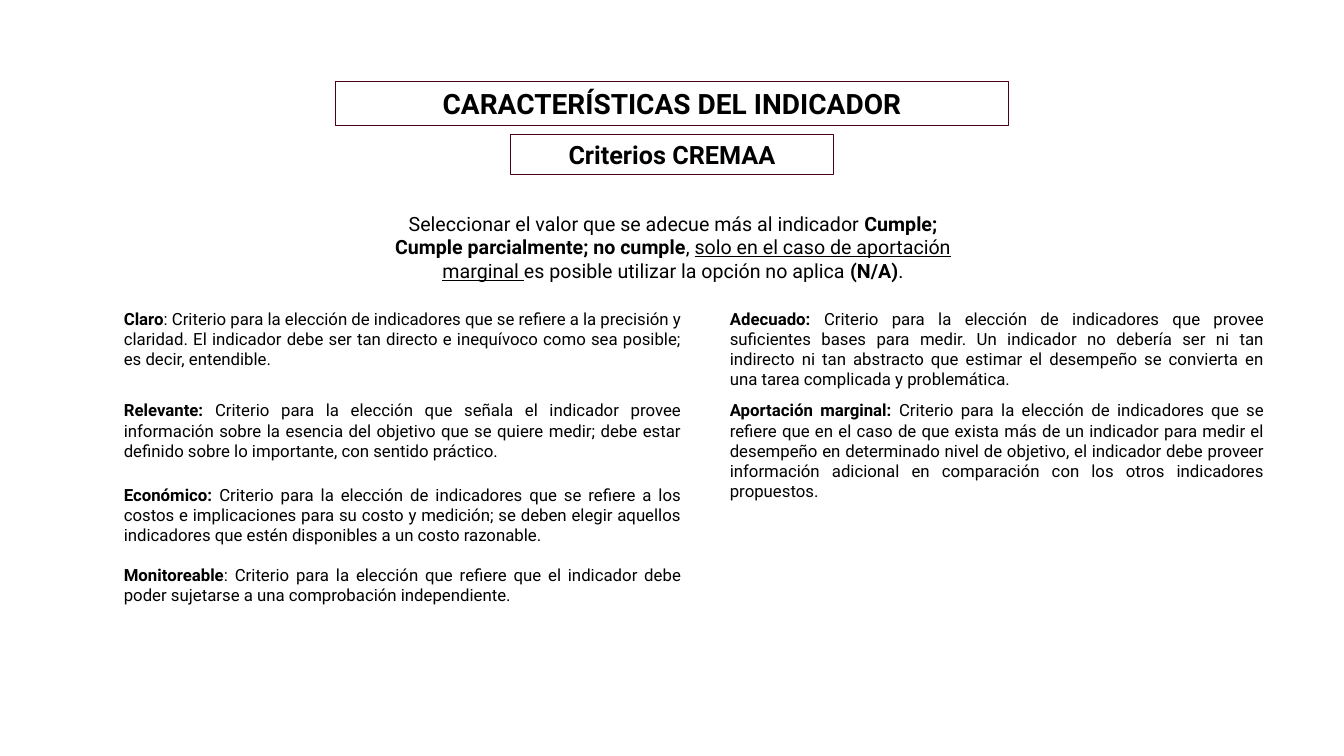
from pptx import Presentation
from pptx.dml.color import RGBColor
from pptx.enum.shapes import MSO_SHAPE
from pptx.enum.text import MSO_ANCHOR, PP_ALIGN
from pptx.util import Inches, Pt

BLACK = RGBColor(0x00, 0x00, 0x00)
WINE = RGBColor(0x4A, 0x00, 0x1F)
FONT = "Roboto"
PLAIN, BOLD, UNDERLINED = (False, False), (True, False), (False, True)

HEADING = "CARACTERÍSTICAS DEL INDICADOR"
SUBHEADING = "Criterios CREMAA"
INSTRUCTIONS = [
    ("Seleccionar el valor que se adecue más al indicador ", PLAIN),
    ("Cumple; Cumple parcialmente; no cumple", BOLD),
    (", ", PLAIN),
    ("solo en el caso de aportación marginal ", UNDERLINED),
    ("es posible utilizar la opción no aplica ", PLAIN),
    ("(N/A)", BOLD),
    (".", PLAIN),
]
LEFT_CRITERIA = [
    (3.01, 0.71, "Claro", ": Criterio para la elección de indicadores que se refiere a la precisión y claridad. El indicador debe ser tan directo e inequívoco como sea posible; es decir, entendible."),
    (3.92, 0.71, "Relevante: ", "Criterio para la elección que señala el indicador provee información sobre la esencia del objetivo que se quiere medir; debe estar definido sobre lo importante, con sentido práctico."),
    (4.76, 0.71, "Económico: ", "Criterio para la elección de indicadores que se refiere a los costos e implicaciones para su costo y medición; se deben elegir aquellos indicadores que estén disponibles a un costo razonable."),
    (5.55, 0.5, "Monitoreable", ": Criterio para la elección que refiere que el indicador debe poder sujetarse a una comprobación independiente."),
]
RIGHT_CRITERIA = [
    (3.01, 0.91, "Adecuado: ", "Criterio para la elección de indicadores que provee suficientes bases para medir. Un indicador no debería ser ni tan indirecto ni tan abstracto que estimar el desempeño se convierta en una tarea complicada y problemática."),
    (3.92, 0.91, "Aportación marginal: ", "Criterio para la elección de indicadores que se refiere que en el caso de que exista más de un indicador para medir el desempeño en determinado nivel de objetivo, el indicador debe proveer información adicional en comparación con los otros indicadores propuestos."),
]
COLUMNS = [(1.13, 5.73, LEFT_CRITERIA), (7.14, 5.5, RIGHT_CRITERIA)]


def write(holder, runs, size, align):
    frame = holder.text_frame
    frame.word_wrap = True
    frame.vertical_anchor = MSO_ANCHOR.TOP
    frame.margin_left = frame.margin_right = Inches(0.1)
    frame.margin_top = frame.margin_bottom = Inches(0.05)
    paragraph = frame.paragraphs[0]
    paragraph.alignment = align
    paragraph.line_spacing = 1.0
    paragraph.space_before = Pt(0)
    for wording, (bold, underline) in runs:
        run = paragraph.add_run()
        run.text = wording
        run.font.name = FONT
        run.font.size = Pt(size)
        run.font.bold = bold
        run.font.underline = underline
        run.font.color.rgb = BLACK


def outline(holder):
    holder.fill.background()
    holder.line.color.rgb = WINE
    holder.line.width = Pt(0.75)


deck = Presentation()
deck.slide_width, deck.slide_height = Inches(13.33), Inches(7.5)
slide = deck.slides.add_slide(deck.slide_layouts[5])

heading = slide.shapes.title
heading.left, heading.top = Inches(3.33), Inches(0.81)
heading.width, heading.height = Inches(6.67), Inches(0.44)
outline(heading)
write(heading, [(HEADING, BOLD)], 20, PP_ALIGN.CENTER)

subheading = slide.shapes.add_shape(
    MSO_SHAPE.RECTANGLE, Inches(5.06), Inches(1.33), Inches(3.21), Inches(0.4))
subheading.shadow.inherit = False
outline(subheading)
write(subheading, [(SUBHEADING, BOLD)], 18, PP_ALIGN.CENTER)

instructions = slide.shapes.add_textbox(
    Inches(3.64), Inches(2.05), Inches(6.07), Inches(0.81))
write(instructions, INSTRUCTIONS, 14, PP_ALIGN.CENTER)

for left, width, criteria in COLUMNS:
    for top, height, name, definition in criteria:
        criterion = slide.shapes.add_textbox(
            Inches(left), Inches(top), Inches(width), Inches(height))
        write(criterion, [(name, BOLD), (definition, PLAIN)], 12, PP_ALIGN.JUSTIFY)

deck.save("out.pptx")
